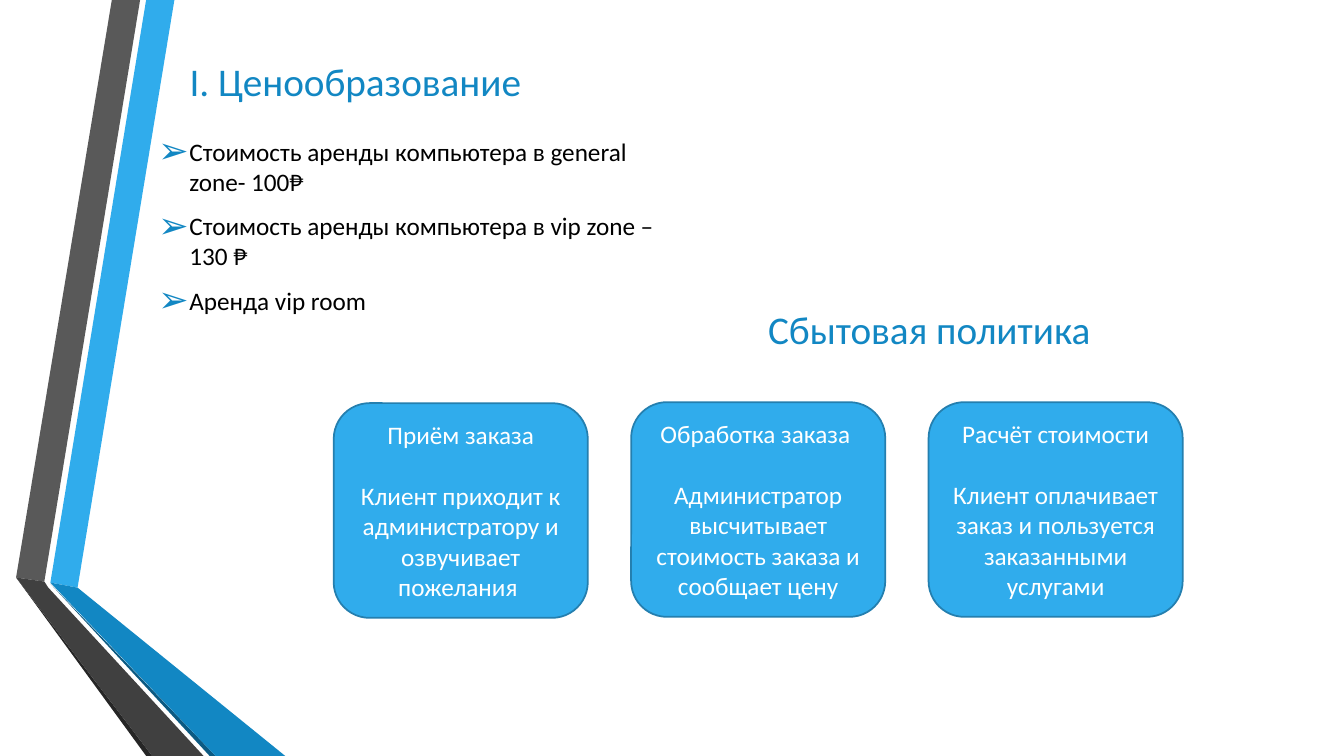
from lxml import etree
from pptx import Presentation
from pptx.dml.color import RGBColor
from pptx.enum.shapes import MSO_SHAPE
from pptx.enum.text import MSO_ANCHOR, MSO_AUTO_SIZE, PP_ALIGN
from pptx.oxml.ns import qn
from pptx.util import Inches, Pt

ROUNDED = MSO_SHAPE.ROUNDED_RECTANGLE
BOTTOM, MIDDLE = MSO_ANCHOR.BOTTOM, MSO_ANCHOR.MIDDLE
LEFT, CENTER = PP_ALIGN.LEFT, PP_ALIGN.CENTER
NO_AUTOFIT = MSO_AUTO_SIZE.NONE

WHITE = RGBColor(0xFF, 0xFF, 0xFF)
BLACK = RGBColor(0x00, 0x00, 0x00)
SKY = RGBColor(0x30, 0xAC, 0xEC)
BLUE = RGBColor(0x12, 0x87, 0xC3)
NAVY = RGBColor(0x0C, 0x5A, 0x82)
OUTLINE = RGBColor(0x24, 0x7F, 0xAF)
GRAY = RGBColor(0x59, 0x59, 0x59)
DARK_GRAY = RGBColor(0x40, 0x40, 0x40)
NEAR_BLACK = RGBColor(0x26, 0x26, 0x26)

RIBBONS = [
    (SKY, [(0.5, 5.78), (0.77, 5.83), (1.73, 0), (1.45, 0)]),
    (GRAY, [(1.39, 0), (1.11, 0), (0.16, 5.73), (0.44, 5.77)]),
    (NEAR_BLACK, [(0.16, 5.73), (1.45, 7.5), (1.51, 7.5)]),
    (NAVY, [(0.5, 5.79), (2.08, 7.5), (2.14, 7.5)]),
    (BLUE, [(0.5, 5.78), (2.14, 7.5), (2.83, 7.5), (0.77, 5.83)]),
    (DARK_GRAY, [(2.02, 7.5), (0.48, 5.83), (0.44, 5.77), (0.16, 5.73), (1.51, 7.5)]),
]
PRICES = [
    "Стоимость аренды компьютера в general zone- 100₱",
    "Стоимость аренды компьютера в vip zone – 130 ₱",
    "Аренда vip room",
]
CARD_LEFT, CARD_STEP, CARD_WIDTH, CARD_HEIGHT = 3.31, 2.95, 2.52, 2.13
CARDS = [
    (4, "Приём заказа", "Клиент приходит к администратору и озвучивает пожелания "),
    (3.99, "Обработка заказа ", "Администратор высчитывает стоимость заказа и сообщает цену"),
    (3.99, "Расчёт стоимости", "Клиент оплачивает заказ и пользуется заказанными услугами"),
]


def write(shape, lines, size, color, align=LEFT, anchor=None):
    """Fill the shape with one paragraph per line, all in one style."""
    frame = shape.text_frame
    frame.text = "\n".join(lines)
    frame.word_wrap = True
    frame.auto_size = NO_AUTOFIT
    if anchor is not None:
        frame.vertical_anchor = anchor
    for para in frame.paragraphs:
        para.alignment = align
        for span in para.runs:
            span.font.name = "Calibri"
            span.font.size = Pt(size)
            span.font.color.rgb = color
    return frame.paragraphs


def add_arrow_bullet(para):
    properties = para._p.get_or_add_pPr()
    indent = Inches(0.31)
    properties.set("marL", str(indent))
    properties.set("indent", str(-indent))
    color = etree.SubElement(properties, qn("a:buClr"))
    etree.SubElement(color, qn("a:srgbClr"), val=str(BLUE))
    etree.SubElement(properties, qn("a:buSzPct"), val="145000")
    etree.SubElement(properties, qn("a:buFont"), typeface="Calibri")
    etree.SubElement(properties, qn("a:buChar"), char="➢")


deck = Presentation()
deck.slide_width, deck.slide_height = Inches(13.33), Inches(7.5)
page = deck.slides.add_slide(deck.slide_layouts[5])

for color, corners in RIBBONS:
    points = [(Inches(x), Inches(y)) for x, y in corners]
    builder = page.shapes.build_freeform(*points[0])
    builder.add_line_segments(points[1:], close=True)
    ribbon = builder.convert_to_shape()
    ribbon.shadow.inherit = False
    ribbon.fill.solid()
    ribbon.fill.fore_color.rgb = color
    ribbon.line.fill.background()

title = page.shapes.title
title.left, title.top = Inches(1.78), Inches(0.46)
title.width, title.height = Inches(5.04), Inches(0.63)
write(title, ["I. Ценообразование"], 28, BLUE, anchor=BOTTOM)

price_box = page.shapes.add_textbox(Inches(1.47), Inches(1.3), Inches(5.35), Inches(2.69))
for para in write(price_box, PRICES, 18, BLACK):
    para.space_before, para.space_after = Pt(4), Pt(6)
    add_arrow_bullet(para)

sales_box = page.shapes.add_textbox(Inches(7.52), Inches(2.92), Inches(5.06), Inches(0.63))
write(sales_box, ["Сбытовая политика"], 28, BLUE, anchor=BOTTOM)

for column, (top, heading, details) in enumerate(CARDS):
    card = page.shapes.add_shape(
        ROUNDED, Inches(CARD_LEFT + column * CARD_STEP), Inches(top),
        Inches(CARD_WIDTH), Inches(CARD_HEIGHT))
    card.shadow.inherit = False
    card.fill.solid()
    card.fill.fore_color.rgb = SKY
    card.line.color.rgb = OUTLINE
    card.line.width = Pt(1.25)
    paragraphs = write(card, [heading, details], 18, WHITE, CENTER, MIDDLE)
    paragraphs[0].space_after = Pt(22)

deck.save("out.pptx")
